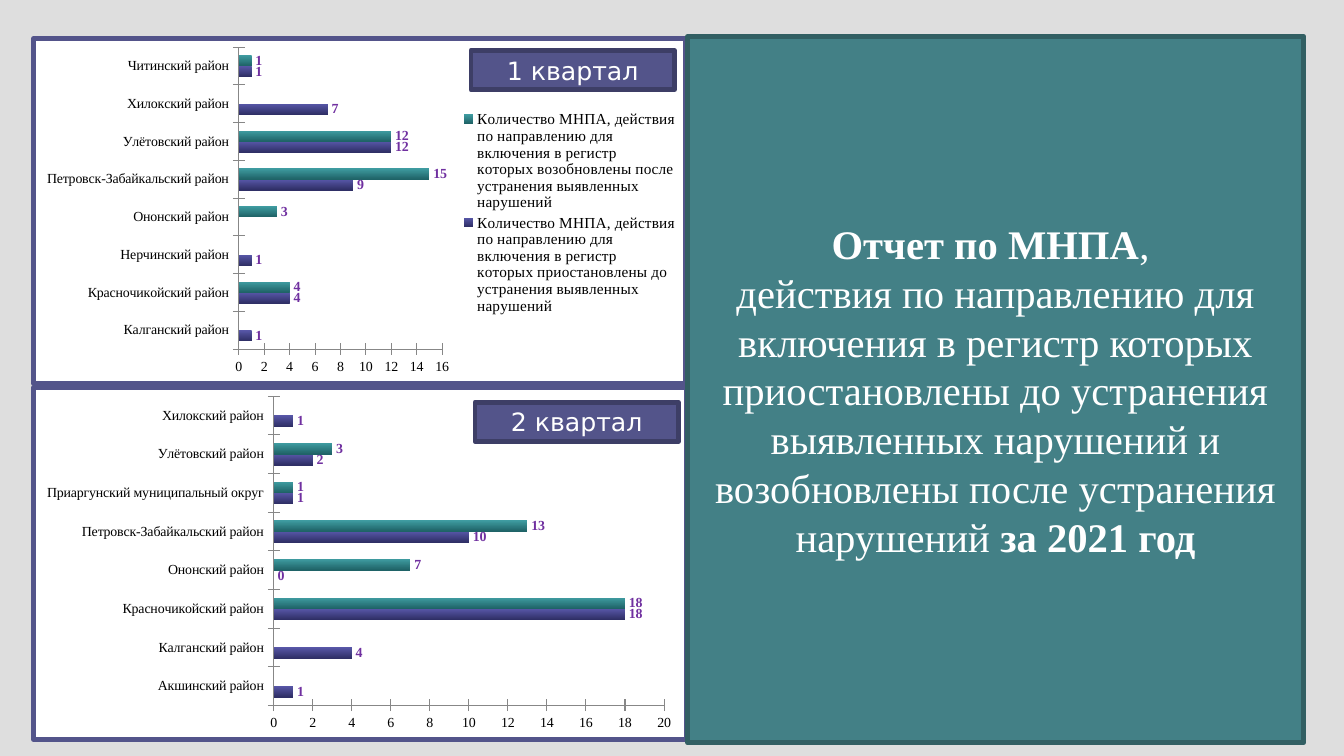
"""Builds the slide with two quarterly bar charts and the report title panel."""
from lxml import etree
from pptx import Presentation
from pptx.chart.data import CategoryChartData
from pptx.dml.color import RGBColor
from pptx.enum.chart import XL_CHART_TYPE, XL_LABEL_POSITION, XL_LEGEND_POSITION, XL_TICK_MARK
from pptx.enum.shapes import MSO_SHAPE
from pptx.enum.text import MSO_ANCHOR, PP_ALIGN
from pptx.oxml import parse_xml
from pptx.oxml.ns import qn
from pptx.util import Inches, Pt

BAR_CLUSTERED = XL_CHART_TYPE.BAR_CLUSTERED
LABEL_OUTSIDE = XL_LABEL_POSITION.OUTSIDE_END
LEGEND_RIGHT = XL_LEGEND_POSITION.RIGHT
TICK_CROSS = XL_TICK_MARK.CROSS
TICK_NONE = XL_TICK_MARK.NONE
RECTANGLE = MSO_SHAPE.RECTANGLE
MIDDLE = MSO_ANCHOR.MIDDLE
CENTER = PP_ALIGN.CENTER

SERIF = "Times New Roman"
SANS = "DejaVu Sans"
BORDER_WIDTH = Pt(3.35)
COLORS = {
    "background": "DEDEDE", "white": "FFFFFF", "black": "000000", "axis": "878787",
    "indigo": "53548A", "indigo_line": "3D3E66", "teal": "438086", "teal_line": "325F63",
    "label": "7030A0", "indigo_light": "5857A8", "indigo_dark": "2F2F66",
    "teal_light": "3F9CA1", "teal_dark": "1F6367",
}
RGB = {name: RGBColor.from_string(value) for name, value in COLORS.items()}

SUSPENDED = ("Количество МНПА, действия по направлению для включения в регистр "
             "которых приостановлены до устранения выявленных нарушений")
RESUMED = ("Количество МНПА, действия по направлению для включения в регистр "
           "которых возобновлены после устранения выявленных нарушений")
SERIES_GRADIENTS = [("indigo_light", "indigo_dark"), ("teal_light", "teal_dark")]

QUARTERS = [
    {
        "title": "1 квартал", "title_at": (4.67, 0.5),
        "chart_at": (0.31, 0.36, 6.51, 3.47), "maximum": 16, "legend": True,
        "plot": (0.315, 0.025, 0.312, 0.875),
        "rows": [
            ("Калганский район", 1, None), ("Красночикойский район", 4, 4),
            ("Нерчинский район", 1, None), ("Ононский район", None, 3),
            ("Петровск-Забайкальский район", 9, 15), ("Улётовский район", 12, 12),
            ("Хилокский район", 7, None), ("Читинский район", 1, 1),
        ],
    },
    {
        "title": "2 квартал", "title_at": (4.71, 3.99),
        "chart_at": (0.31, 3.82, 6.52, 3.54), "maximum": 20, "legend": False,
        "plot": (0.368, 0.025, 0.598, 0.878),
        "rows": [
            ("Акшинский район", 1, None), ("Калганский район", 4, None),
            ("Красночикойский район", 18, 18), ("Ононский район", 0, 7),
            ("Петровск-Забайкальский район", 10, 13),
            ("Приаргунский муниципальный округ", 1, 1),
            ("Улётовский район", 2, 3), ("Хилокский район", 1, None),
        ],
    },
]
LEGEND_AREA = (0.66, 0.2, 0.325, 0.61)

CHART_NAMESPACES = (
    'xmlns:c="http://schemas.openxmlformats.org/drawingml/2006/chart" '
    'xmlns:a="http://schemas.openxmlformats.org/drawingml/2006/main"'
)
CHART_FRAME = (
    f'<c:spPr {CHART_NAMESPACES}><a:solidFill><a:srgbClr val="{COLORS["white"]}"/></a:solidFill>'
    f'<a:ln w="{BORDER_WIDTH}"><a:solidFill><a:srgbClr val="{COLORS["indigo"]}"/></a:solidFill>'
    '</a:ln></c:spPr>'
)


def add_box(position, color, line_color, runs, font, size):
    """Adds a bordered rectangle with centred text; each run is (text, bold)."""
    shape = slide.shapes.add_shape(RECTANGLE, *map(Inches, position))
    shape.shadow.inherit = False
    shape.fill.solid()
    shape.fill.fore_color.rgb = RGB[color]
    shape.line.color.rgb = RGB[line_color]
    shape.line.width = BORDER_WIDTH
    shape.text_frame.word_wrap = True
    shape.text_frame.vertical_anchor = MIDDLE
    paragraph = shape.text_frame.paragraphs[0]
    paragraph.alignment = CENTER
    for text, bold in runs:
        for index, piece in enumerate(text.split("\n")):
            if index:
                paragraph.add_line_break()
            run = paragraph.add_run()
            run.text = piece
            run.font.name = font
            run.font.size = Pt(size)
            run.font.bold = bold
            run.font.color.rgb = RGB["white"]


def set_layout(parent, area, target=None):
    """Places a chart part by fractions of the chart's width and height."""
    for old_layout in parent.findall(qn("c:layout")):
        parent.remove(old_layout)
    layout = etree.Element(qn("c:layout"))
    manual = etree.SubElement(layout, qn("c:manualLayout"))
    settings = [("layoutTarget", target)] if target else []
    settings += [("xMode", "edge"), ("yMode", "edge"), *zip("xywh", area)]
    for name, value in settings:
        etree.SubElement(manual, qn(f"c:{name}")).set("val", str(value))
    position = parent.find(qn("c:legendPos"))
    if position is None:
        parent.insert(0, layout)
    else:
        position.addnext(layout)


presentation = Presentation()
presentation.slide_width = Inches(13.33)
presentation.slide_height = Inches(7.5)
slide = presentation.slides.add_slide(presentation.slide_layouts[6])
slide.background.fill.solid()
slide.background.fill.fore_color.rgb = RGB["background"]

for quarter in QUARTERS:
    districts, suspended, resumed = zip(*quarter["rows"])
    chart_data = CategoryChartData()
    chart_data.categories = districts
    chart_data.add_series(SUSPENDED, suspended)
    chart_data.add_series(RESUMED, resumed)
    chart = slide.shapes.add_chart(
        BAR_CLUSTERED, *map(Inches, quarter["chart_at"]), chart_data).chart
    chart.has_title = False
    chart.font.name = SERIF
    chart.font.size = Pt(10)
    chart.font.color.rgb = RGB["black"]
    chart_part = chart.element.find(qn("c:chart"))
    chart_part.addnext(parse_xml(CHART_FRAME))
    set_layout(chart_part.find(qn("c:plotArea")), quarter["plot"], "inner")

    for axis in (chart.category_axis, chart.value_axis):
        axis.has_major_gridlines = False
        axis.major_tick_mark = TICK_CROSS
        axis.minor_tick_mark = TICK_NONE
        axis.format.line.color.rgb = RGB["axis"]
        axis.format.line.width = Pt(0.75)
    chart.value_axis.minimum_scale = 0
    chart.value_axis.maximum_scale = quarter["maximum"]
    chart.value_axis.major_unit = 2

    plot = chart.plots[0]
    plot.gap_width = 150
    plot.overlap = 0
    plot.vary_by_categories = False
    for series, gradient in zip(plot.series, SERIES_GRADIENTS):
        fill = series.format.fill
        fill.gradient()
        fill.gradient_angle = 270
        for stop, color, place in zip(fill.gradient_stops, gradient, (0, 1)):
            stop.color.rgb = RGB[color]
            stop.position = place
        labels = series.data_labels
        labels.show_value = True
        labels.position = LABEL_OUTSIDE
        labels.font.name = SERIF
        labels.font.size = Pt(10)
        labels.font.bold = True
        labels.font.color.rgb = RGB["label"]

    chart.has_legend = quarter["legend"]
    if quarter["legend"]:
        chart.legend.position = LEGEND_RIGHT
        chart.legend.include_in_layout = False
        chart.legend.font.name = SERIF
        chart.legend.font.size = Pt(11)
        chart.legend.font.color.rgb = RGB["black"]
        set_layout(chart_part.find(qn("c:legend")), LEGEND_AREA)

    add_box((*quarter["title_at"], 2.02, 0.39), "indigo", "indigo_line",
            [(quarter["title"], False)], SANS, 18)

add_box((6.82, 0.36, 6.11, 7.01), "teal", "teal_line", [
    ("Отчет по МНПА", True),
    (", \nдействия по направлению для включения в регистр которых приостановлены до устранения "
     "выявленных нарушений и возобновлены после устранения нарушений ", False),
    ("за 2021 год", True),
], SERIF, 29)

presentation.save("out.pptx")
